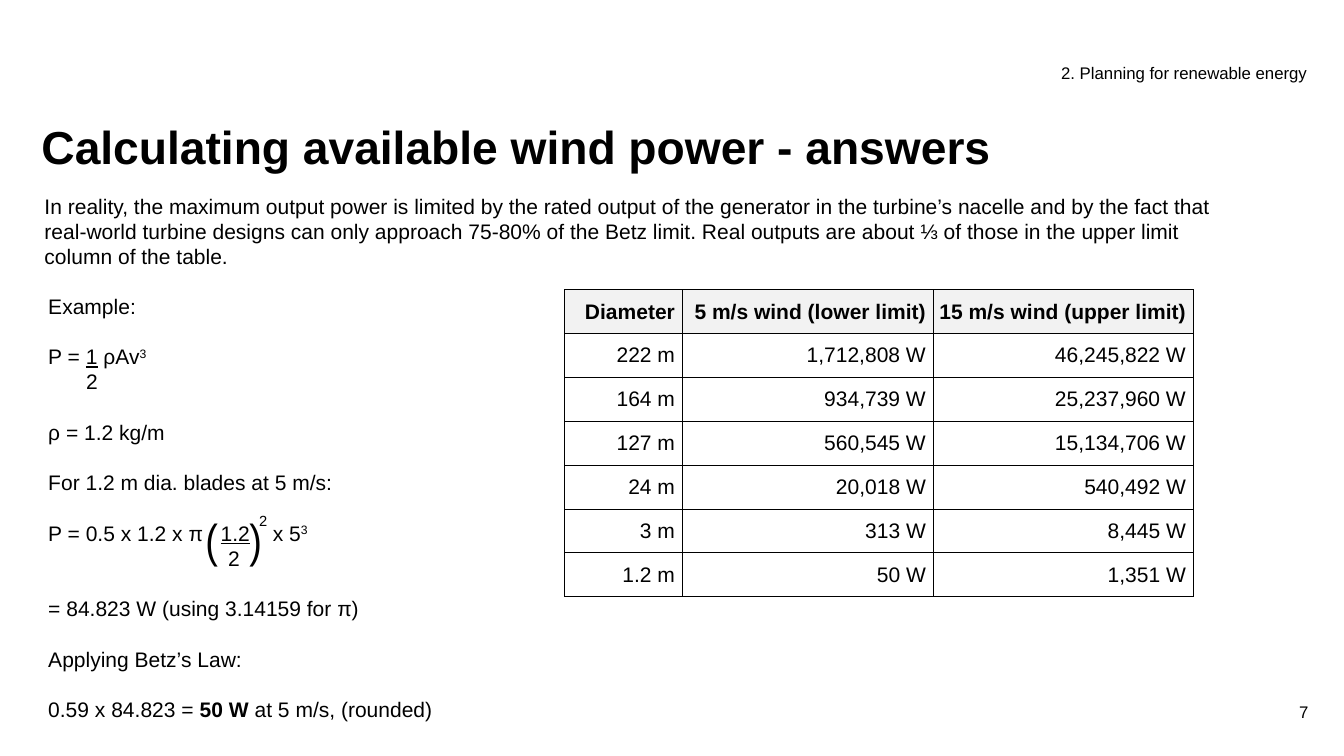
from lxml.etree import SubElement
from pptx import Presentation
from pptx.dml.color import RGBColor
from pptx.enum.text import MSO_ANCHOR as Anchor, PP_ALIGN as Align
from pptx.oxml.ns import qn
from pptx.util import Inches, Pt

BLACK = RGBColor(0, 0, 0)
HEADER_GREY = RGBColor(0xF2, 0xF2, 0xF2)

TITLE = "Calculating available wind power - answers"
SECTION = "2. Planning for renewable energy"
PAGE_NUMBER = "7"
INTRO = (
    "In reality, the maximum output power is limited by the rated output of the "
    "generator in the turbine’s nacelle and by the fact that real-world turbine "
    "designs can only approach 75-80% of the Betz limit. Real outputs are about ⅓ "
    "of those in the upper limit column of the table."
)

# Each line: spans of (text, style), and where needed an indent, tab stops or no gap
EXAMPLE = [
    dict(spans=[("Example:", "")], gap=False),
    dict(spans=[("P = ", ""), ("1", "underline"), (" ρAv", ""), ("3", "superscript")]),
    dict(spans=[("2", "")], indent=0.5, gap=False),
    dict(spans=[("ρ = 1.2 kg/m", "")]),
    dict(spans=[("For 1.2 m dia. blades at 5 m/s:", "")]),
    dict(spans=[("P = 0.5 x 1.2 x π\t", ""), ("1.2", "underline"), ("\tx 5", ""),
                ("3", "superscript")], tabs=[2.28, 2.97]),
    dict(spans=[("2", "")], indent=2.38, gap=False),
    dict(spans=[("= 84.823 W (using 3.14159 for π)", "")]),
    dict(spans=[("Applying Betz’s Law:", "")]),
    dict(spans=[("0.59 x 84.823 = ", ""), ("50 W", "bold"), (" at 5 m/s, (rounded)", "")]),
]
LINE_GAP = 24

POWER_TABLE = [
    ("Diameter", "5 m/s wind (lower limit)", "15 m/s wind (upper limit)"),
    ("222 m", "1,712,808 W", "46,245,822 W"),
    ("164 m", "934,739 W", "25,237,960 W"),
    ("127 m", "560,545 W", "15,134,706 W"),
    ("24 m", "20,018 W", "540,492 W"),
    ("3 m", "313 W", "8,445 W"),
    ("1.2 m", "50 W", "1,351 W"),
]
COLUMN_WIDTHS = (1.56, 3.32, 3.44)
ROW_HEIGHT = 0.58


def set_font(target, size, bold=False, name="Arial"):
    target.font.size = Pt(size)
    target.font.name = name
    target.font.bold = bold
    target.font.color.rgb = BLACK


def add_tabs(para, stops):
    tab_list = SubElement(para._p.get_or_add_pPr(), qn("a:tabLst"))
    for stop in stops:
        SubElement(tab_list, qn("a:tab"), pos=str(Inches(stop)), algn="l")


def add_frame(page, left, top, width, height, anchor=Anchor.TOP):
    box = page.shapes.add_textbox(*map(Inches, (left, top, width, height)))
    frame = box.text_frame
    frame.word_wrap = True
    frame.vertical_anchor = anchor
    return frame


def add_label(page, place, text, size, tabs=(), anchor=Anchor.TOP, **font):
    frame = add_frame(page, *place, anchor=anchor)
    para = frame.paragraphs[0]
    para.text = text
    if tabs:
        add_tabs(para, tabs)
    set_font(para.runs[0], size, **font)
    return frame


def add_example(page):
    frame = add_frame(page, 0.54, 3.83, 5.53, 5.82)
    for index, line in enumerate(EXAMPLE):
        para = frame.add_paragraph() if index else frame.paragraphs[0]
        if "indent" in line:
            para._p.get_or_add_pPr().set("marL", str(Inches(line["indent"])))
        if "tabs" in line:
            add_tabs(para, line["tabs"])
        if line.get("gap", True):
            para.space_before = Pt(LINE_GAP)
        for text, style in line["spans"]:
            span = para.add_run()
            span.text = text
            set_font(span, 20, bold=style == "bold")
            if style == "underline":
                span.font.underline = True
            elif style == "superscript":
                span.font._element.set("baseline", "30000")


def add_borders(cell):
    properties = cell._tc.get_or_add_tcPr()
    for side in ("lnL", "lnR", "lnT", "lnB"):
        line = SubElement(properties, qn(f"a:{side}"), w=str(Pt(0.5)))
        fill = SubElement(line, qn("a:solidFill"))
        SubElement(fill, qn("a:srgbClr"), val=str(BLACK))


def add_power_table(page):
    rows, columns = len(POWER_TABLE), len(COLUMN_WIDTHS)
    table = page.shapes.add_table(
        rows, columns, Inches(7.47), Inches(3.83),
        Inches(sum(COLUMN_WIDTHS)), Inches(ROW_HEIGHT * rows)).table
    table.horz_banding = False
    for column, width in zip(table.columns, COLUMN_WIDTHS):
        column.width = Inches(width)
    for row_index, (row, values) in enumerate(zip(table.rows, POWER_TABLE)):
        row.height = Inches(ROW_HEIGHT)
        is_header = row_index == 0
        for cell, value in zip(row.cells, values):
            add_borders(cell)
            if is_header:
                cell.fill.solid()
                cell.fill.fore_color.rgb = HEADER_GREY
            else:
                cell.fill.background()
            cell.margin_left = cell.margin_top = Inches(0.01)
            cell.margin_right, cell.margin_bottom = Inches(0.1), 0
            cell.vertical_anchor = Anchor.MIDDLE
            para = cell.text_frame.paragraphs[0]
            para.text = value
            para.alignment = Align.RIGHT
            set_font(para.runs[0], 20, bold=is_header)


def main():
    deck = Presentation()
    deck.slide_width, deck.slide_height = Inches(17.78), Inches(10)
    page = deck.slides.add_slide(deck.slide_layouts[6])

    title = add_label(page, (0.45, 1.58, 15.33, 0.8), TITLE, 44,
                      anchor=Anchor.MIDDLE, bold=True)
    title.paragraphs[0].line_spacing = 0.9
    add_label(page, (0.49, 2.51, 16.09, 1.1), INTRO, 20)
    add_example(page)

    number = add_label(page, (16.72, 9.28, 0.59, 0.53), PAGE_NUMBER, 16)
    number.margin_left = number.margin_right = 0
    number.margin_top = number.margin_bottom = 0
    number.paragraphs[0].alignment = Align.RIGHT

    # Brackets and exponent around the radius fraction
    add_label(page, (2.62, 6.72, 1.01, 0.84), "(\t)", 44, tabs=[0.58], name="Arial Narrow")
    add_label(page, (3.33, 6.72, 0.52, 0.34), "2", 14)

    add_label(page, (13.94, 0.78, 3.47, 0.53), SECTION, 16)
    add_power_table(page)
    deck.save("out.pptx")


if __name__ == "__main__":
    main()
